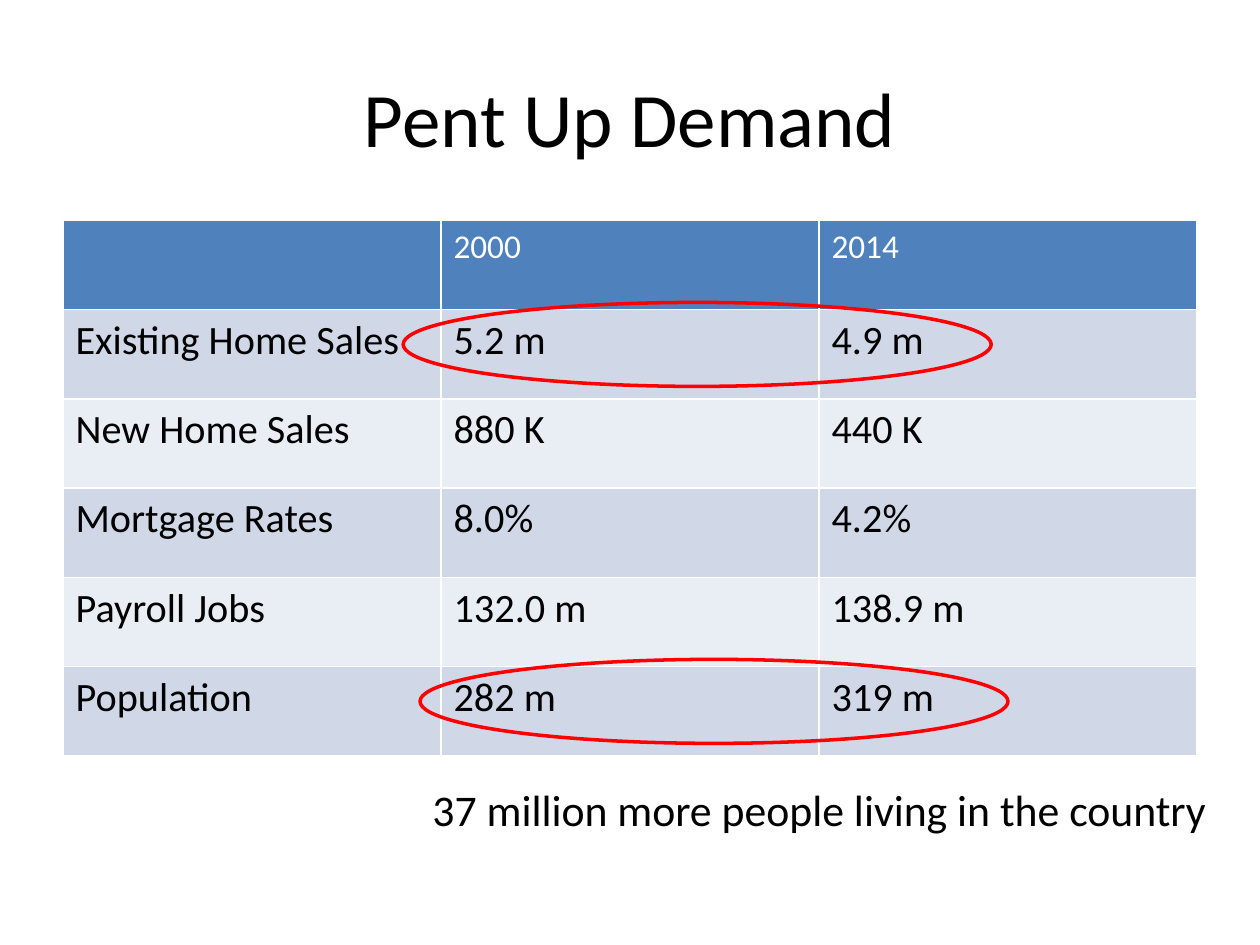
from pptx import Presentation
from pptx.dml.color import RGBColor
from pptx.enum.shapes import MSO_SHAPE
from pptx.enum.text import MSO_ANCHOR, PP_ALIGN
from pptx.util import Pt

BLACK = RGBColor(0x00, 0x00, 0x00)
WHITE = RGBColor(0xFF, 0xFF, 0xFF)
RED = RGBColor(0xFF, 0x00, 0x00)
HEADER_BLUE = RGBColor(0x4F, 0x81, 0xBD)
BANDS = (RGBColor(0xE9, 0xED, 0xF4), RGBColor(0xD0, 0xD8, 0xE8))

ROWS = [
    ("", "2000", "2014"),
    ("Existing Home Sales", "5.2 m", "4.9 m"),
    ("New Home Sales", "880 K", "440 K"),
    ("Mortgage Rates", "8.0%", "4.2%"),
    ("Payroll Jobs", "132.0 m", "138.9 m"),
    ("Population", "282 m", "319 m"),
]


def write_text(tf, text, size, color=BLACK, align=PP_ALIGN.LEFT):
    p = tf.paragraphs[0]
    p.alignment = align
    r = p.add_run()
    r.text = text
    r.font.name = "Calibri"
    r.font.size = Pt(size)
    r.font.bold = False
    r.font.color.rgb = color


def add_text(s, x, y, w, h, text, size, wrap=True, anchor=MSO_ANCHOR.TOP, **fmt):
    tf = s.shapes.add_textbox(Pt(x), Pt(y), Pt(w), Pt(h)).text_frame
    tf.word_wrap = wrap
    tf.vertical_anchor = anchor
    write_text(tf, text, size, **fmt)


def add_data_table(s, x, y, w, h, rows):
    frame = s.shapes.add_table(len(rows), len(rows[0]), Pt(x), Pt(y), Pt(w), Pt(h))
    for i, values in enumerate(rows):
        header = i == 0
        for j, value in enumerate(values):
            cell = frame.table.cell(i, j)
            cell.fill.solid()
            cell.fill.fore_color.rgb = HEADER_BLUE if header else BANDS[i % 2]
            if value:
                write_text(cell.text_frame, value, 19 if header else 23,
                           color=WHITE if header else BLACK)


def add_ring(s, x, y):
    sp = s.shapes.add_shape(MSO_SHAPE.OVAL, Pt(x), Pt(y), Pt(336), Pt(48))
    sp.shadow.inherit = False
    sp.fill.background()
    sp.line.color.rgb = RED
    sp.line.width = Pt(2)


def main():
    prs = Presentation()
    prs.slide_width, prs.slide_height = Pt(720), Pt(540)
    s = prs.slides.add_slide(prs.slide_layouts[6])
    add_text(s, 36, 21.6, 648, 90, "Pent Up Demand", 44,
             anchor=MSO_ANCHOR.MIDDLE, align=PP_ALIGN.CENTER)
    add_data_table(s, 36, 126, 648, 306, ROWS)
    add_ring(s, 230.4, 172.8)
    add_ring(s, 240, 376.8)
    add_text(s, 240, 444, 461.5, 37.5,
             "37 million more people living in the country", 25, wrap=False)
    prs.save("out.pptx")


if __name__ == "__main__":
    main()
